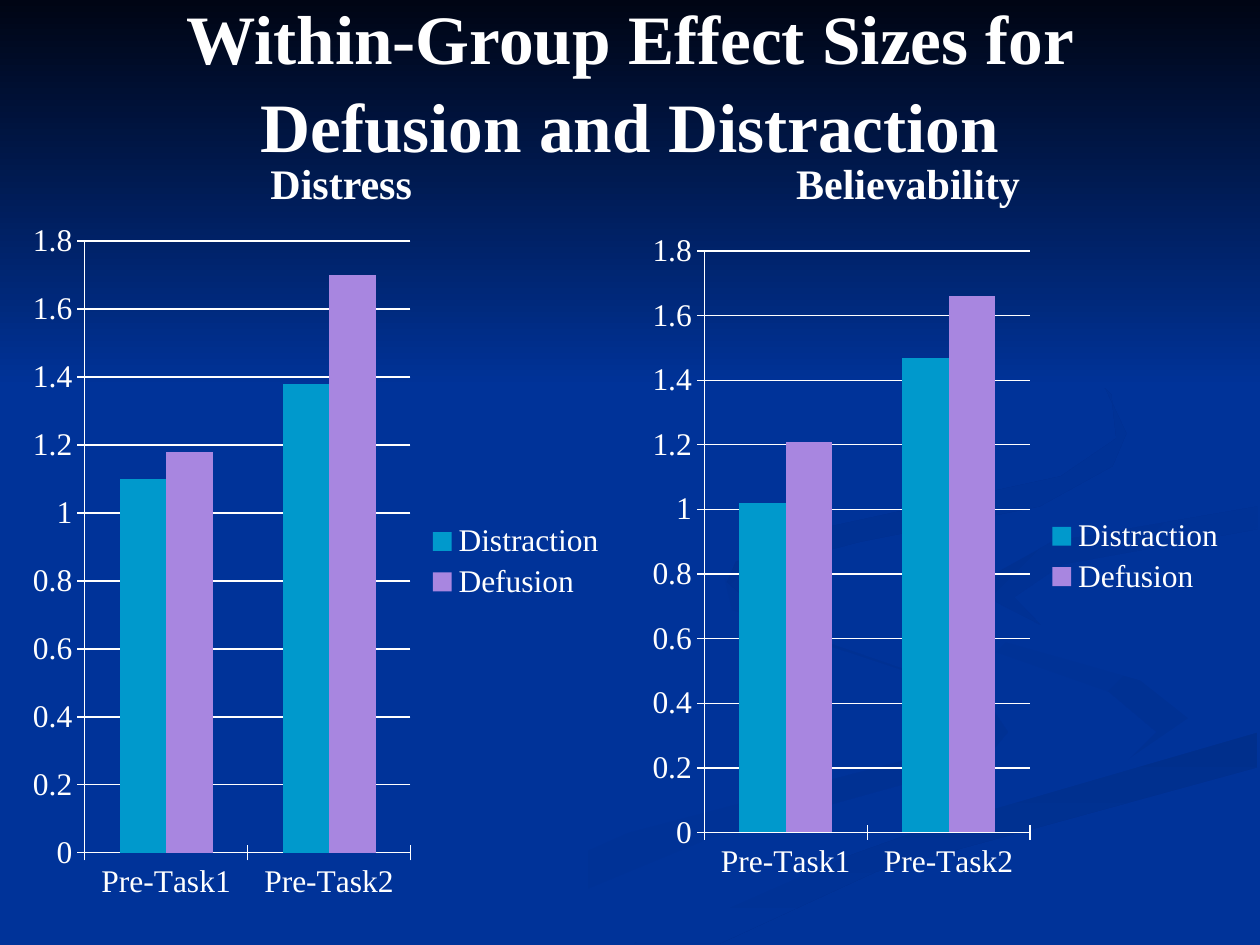
from dataclasses import dataclass

from pptx import Presentation
from pptx import util as u
from pptx.chart.data import CategoryChartData
from pptx.dml.color import RGBColor
from pptx.enum import chart as charts
from pptx.enum import text

FONT = "Times New Roman"
COLORS = {
    "blue": "003399",
    "night": "000514",
    "shade_a": "003193",
    "shade_b": "002F8C",
    "shade_c": "003091",
    "shade_d": "002F8E",
    "white": "FFFFFF",
    "Distraction": "0099CC",
    "Defusion": "A886E0",
}
GRID = u.Pt(0.72)  # outline points are counted in hundredths of an inch


@dataclass(frozen=True)
class Frame:
    left: float
    top: float
    width: float
    height: float

    def lengths(self) -> list:
        return [u.Pt(n) for n in (self.left, self.top, self.width, self.height)]


@dataclass(frozen=True)
class Outline:
    points: list
    start: str
    end: str
    angle: float = 0  # clockwise, in degrees


@dataclass(frozen=True)
class Panel:
    heading: str
    heading_frame: Frame
    chart_frame: Frame
    series: dict


# Background ribbons, from back to front, then the dark band at the top
OUTLINES = [
    Outline([(781, 553), (626, 502), (575, 459), (581, 484), (752, 543),
             (786, 566), (739, 598), (499, 661), (300, 749), (361, 749),
             (564, 665), (780, 605), (800, 581)], "blue", "shade_a"),
    Outline([(943, 570), (905, 540), (774, 503), (724, 464), (755, 505),
             (880, 549), (918, 581), (894, 605), (932, 589)],
            "blue", "shade_a", 45),
    Outline([(503, 749), (571, 749), (695, 692), (998, 609), (998, 581),
             (764, 647), (599, 706)], "shade_b", "blue", 90),
    Outline([(725, 464), (759, 498), (905, 540), (943, 570), (892, 605),
             (663, 668), (477, 749), (519, 747), (696, 669), (999, 581),
             (999, 538), (832, 498), (781, 463), (835, 430), (999, 402),
             (999, 387), (788, 422)], "blue", "blue"),
    Outline([(781, 460), (791, 478), (826, 496), (805, 474), (843, 448),
             (998, 420), (998, 402), (835, 430)], "shade_c", "blue", 45),
    Outline([(683, 430), (825, 402), (883, 370), (894, 344), (873, 299),
             (821, 261), (762, 233), (846, 279), (882, 313), (886, 348),
             (842, 378), (649, 420), (584, 446), (577, 462), (622, 500),
             (593, 470), (614, 448)], "shade_d", "blue", 45),
    Outline([(0, 0), (0, 308), (1000, 308), (1000, 0)], "night", "blue", 90),
]

PANELS = [
    Panel("Distress", Frame(36, 72, 318, 50.4), Frame(12, 120, 342, 402),
          {"Distraction": (1.1, 1.38), "Defusion": (1.18, 1.7)}),
    Panel("Believability", Frame(360, 72, 318, 50.4), Frame(366, 126, 342, 384),
          {"Distraction": (1.02, 1.47), "Defusion": (1.21, 1.66)}),
]


def color(name: str) -> RGBColor:
    return RGBColor.from_string(COLORS[name])


def draw_outline(page, outline: Outline) -> None:
    first, *rest = outline.points
    builder = page.shapes.build_freeform(*first, scale=GRID)
    builder.add_line_segments(rest, close=True)
    shape = builder.convert_to_shape()
    shape.shadow.inherit = False
    shape.line.fill.background()
    if outline.start == outline.end:
        shape.fill.solid()
        shape.fill.fore_color.rgb = color(outline.start)
        return
    shape.fill.gradient()
    shape.fill.gradient_angle = (360 - outline.angle) % 360
    stops = zip(shape.fill.gradient_stops, (outline.start, outline.end), (0, 1))
    for stop, name, position in stops:
        stop.color.rgb = color(name)
        stop.position = position


def add_text(page, frame: Frame, words: str, *, size: float,
             anchor: text.MSO_ANCHOR, spacing: float = 1.0) -> None:
    box = page.shapes.add_textbox(*frame.lengths())
    box.text_frame.word_wrap = True
    box.text_frame.vertical_anchor = anchor
    para = box.text_frame.paragraphs[0]
    para.alignment = text.PP_ALIGN.CENTER
    para.line_spacing = spacing
    span = para.add_run()
    span.text = words
    span.font.name = FONT
    span.font.size = u.Pt(size)
    span.font.bold = True
    span.font.color.rgb = color("white")


def style_line(line) -> None:
    line.color.rgb = color("white")
    line.width = u.Pt(0.75)


def draw_chart(page, panel: Panel) -> None:
    data = CategoryChartData()
    data.categories = ["Pre-Task1", "Pre-Task2"]
    for name, values in panel.series.items():
        data.add_series(name, values)
    chart = page.shapes.add_chart(charts.XL_CHART_TYPE.COLUMN_CLUSTERED,
                                  *panel.chart_frame.lengths(), data).chart
    chart.has_title = False
    chart.font.name = FONT
    chart.font.size = u.Pt(18)
    chart.font.color.rgb = color("white")
    chart.has_legend = True
    chart.legend.position = charts.XL_LEGEND_POSITION.RIGHT
    chart.legend.include_in_layout = False

    # Axes and gridlines
    for axis in (chart.category_axis, chart.value_axis):
        axis.major_tick_mark = charts.XL_TICK_MARK.CROSS
        style_line(axis.format.line)
    scale = chart.value_axis
    scale.minimum_scale, scale.maximum_scale, scale.major_unit = 0, 1.8, 0.2
    style_line(scale.major_gridlines.format.line)

    # Columns
    plot = chart.plots[0]
    plot.vary_by_categories = False
    plot.gap_width = 150
    for series in plot.series:
        series.format.fill.solid()
        series.format.fill.fore_color.rgb = color(series.name)


def main() -> None:
    deck = Presentation()
    deck.slide_width, deck.slide_height = u.Pt(720), u.Pt(540)
    page = deck.slides.add_slide(deck.slide_layouts[6])
    page.background.fill.solid()
    page.background.fill.fore_color.rgb = color("blue")

    for outline in OUTLINES:
        draw_outline(page, outline)

    # Title, headings and charts
    add_text(page, Frame(36, 0, 648, 90),
             "Within-Group Effect Sizes for Defusion and Distraction",
             size=39.6, anchor=text.MSO_ANCHOR.MIDDLE, spacing=1.05)
    for panel in PANELS:
        add_text(page, panel.heading_frame, panel.heading,
                 size=24, anchor=text.MSO_ANCHOR.BOTTOM)
    for panel in PANELS:
        draw_chart(page, panel)

    deck.save("out.pptx")


if __name__ == "__main__":
    main()
